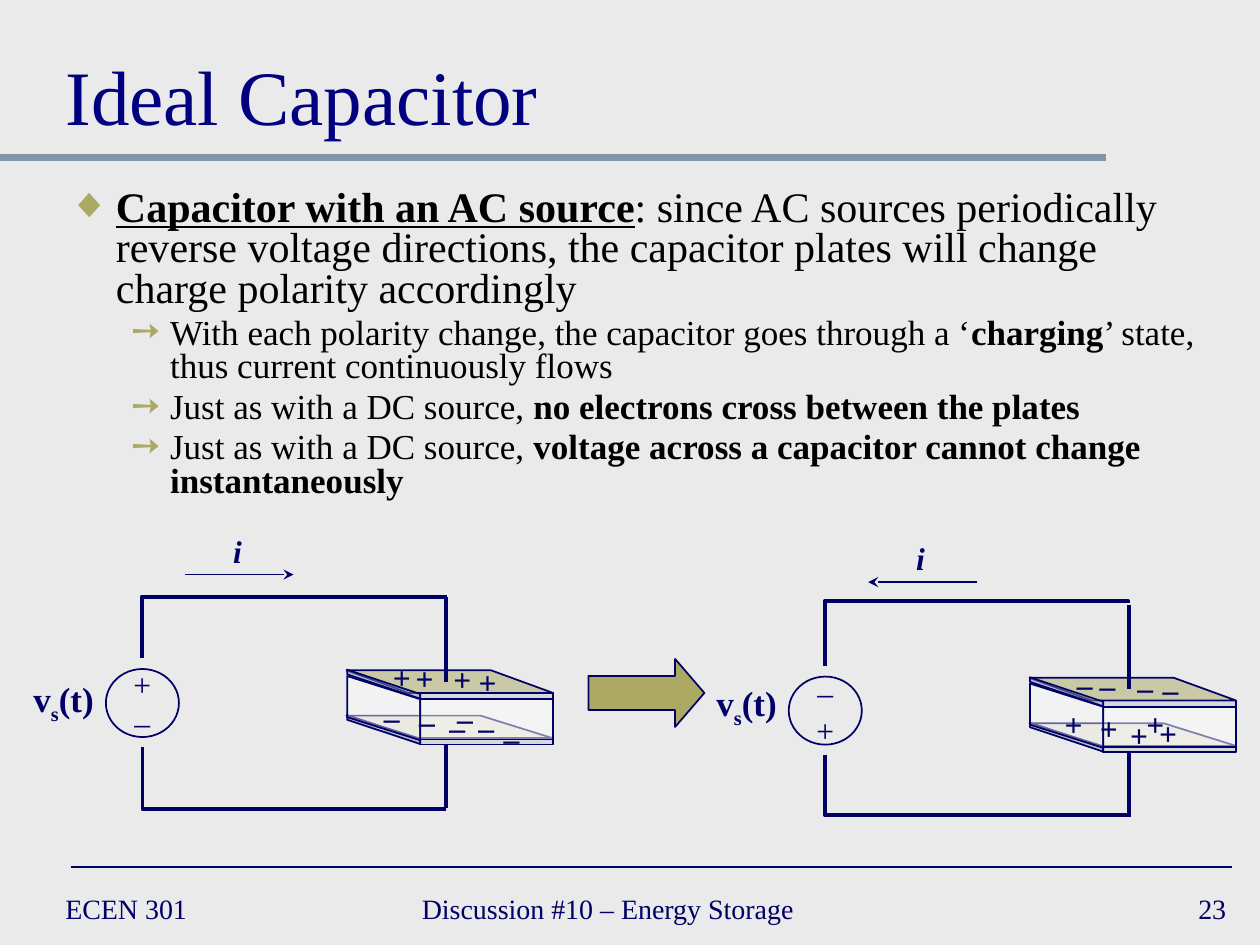
from dataclasses import dataclass
from typing import Optional

from lxml.etree import SubElement
from pptx import Presentation
from pptx.dml.color import RGBColor
from pptx.enum.shapes import MSO_CONNECTOR, MSO_SHAPE
from pptx.enum.text import MSO_ANCHOR, MSO_AUTO_SIZE, PP_ALIGN
from pptx.oxml.ns import qn
from pptx.util import Inches, Pt

FONT = "Times New Roman"
NAVY, SLATE, OLIVE, WHITE = "000066", "8495A9", "ACA964", "FFFFFF"


@dataclass
class Plate:
    kind: MSO_SHAPE
    left: float
    top: float
    width: float
    height: float
    fill: str
    opacity: int
    adjustment: Optional[float] = None
    rotation: int = 0
    flipped: bool = False


@dataclass
class Circuit:
    offset_x: float
    offset_y: float
    label_top: float
    upper_sign: str
    lower_sign: str
    lower_charges: list[tuple[float, float]]
    wire_bends: tuple[float, float]
    current_ends: tuple[float, float]


@dataclass
class Bullet:
    character: str
    level: int
    size: int
    left: float
    hanging: float
    runs: list[tuple[str, bool, bool]]


SLANTED, BOX = MSO_SHAPE.PARALLELOGRAM, MSO_SHAPE.RECTANGLE


def electrode(top: float, slant: float, opacity: int) -> list[Plate]:
    return [
        Plate(SLANTED, 2.75, top, 1.64, 0.18, OLIVE, opacity, slant, flipped=True),
        Plate(BOX, 3.33, top + 0.18, 1.06, 0.05, SLATE, 20),
        Plate(SLANTED, 2.93, top - 0.18, 0.23, 0.58, SLATE, 50, 0.84, 270),
    ]


PLATES = electrode(5.32, 2.74, 50) + electrode(5.68, 3.2, 20) + [
    Plate(BOX, 3.33, 5.55, 1.06, 0.32, WHITE, 50),
    Plate(SLANTED, 2.79, 5.33, 0.51, 0.58, WHITE, 40, 0.36, 270),
]
UPPER_CHARGES = [(3.02, 5.17), (3.2, 5.18), (3.5, 5.19), (3.7, 5.21)]
CIRCUITS = [
    Circuit(0, 0, 5.33, "+", "–",
            [(2.94, 5.49), (3.22, 5.52), (3.46, 5.57), (3.52, 5.5), (3.89, 5.66), (3.69, 5.57)],
            (0.98, 1), (1.47, 2.33)),
    Circuit(5.42, 0.06, 5.36, "–", "+",
            [(2.93, 5.49), (3.21, 5.52), (3.45, 5.57), (3.58, 5.49), (3.68, 5.56)],
            (1.03, 0.98), (2.33, 1.47)),
]
BULLETS = [
    Bullet("◆", 0, 24, 0.38, 0.38, [
        ("Capacitor with an AC source", True, True),
        (": since AC sources periodically reverse voltage directions, "
         "the capacitor plates will change charge polarity accordingly", False, False)]),
    Bullet("➙", 1, 20, 0.81, 0.31, [
        ("With each polarity change, the capacitor goes through a ‘", False, False),
        ("charging", True, False),
        ("’ state, thus current continuously flows", False, False)]),
    Bullet("➙", 1, 20, 0.81, 0.31, [
        ("Just as with a DC source, ", False, False),
        ("no electrons cross between the plates", True, False)]),
    Bullet("➙", 1, 20, 0.81, 0.31, [
        ("Just as with a DC source, ", False, False),
        ("voltage across a capacitor cannot change instantaneously", True, False)]),
]


def color(value: str) -> RGBColor:
    return RGBColor.from_string(value)


def place(shape, left: float, top: float, width: float, height: float) -> None:
    shape.left, shape.top = Inches(left), Inches(top)
    shape.width, shape.height = Inches(width), Inches(height)


def style_font(font, size: int, value: str = NAVY) -> None:
    font.name, font.size = FONT, Pt(size)
    font.color.rgb = color(value)


def add_line(shapes, start, end, weight: float, value: str = NAVY,
             kind=MSO_CONNECTOR.STRAIGHT, arrow: bool = False):
    connector = shapes.add_connector(kind, *map(Inches, (*start, *end)))
    connector.line.color.rgb = color(value)
    connector.line.width = Pt(weight)
    if arrow:
        SubElement(connector.line._get_or_add_ln(), qn("a:tailEnd"), type="stealth")
    SubElement(connector._element.spPr, qn("a:effectLst"))
    return connector


def add_wire(shapes, start, end, bend: float) -> None:
    connector = add_line(shapes, start, end, 2.25, kind=MSO_CONNECTOR.ELBOW)
    properties = connector._element.spPr
    properties.find(qn("a:xfrm")).set("rot", str(270 * 60000))
    geometry = properties.find(qn("a:prstGeom"))
    guides = geometry.find(qn("a:avLst"))
    if guides is None:
        guides = SubElement(geometry, qn("a:avLst"))
    SubElement(guides, qn("a:gd"), name="adj1", fmla=f"val {round(bend * 100000)}")


def add_figure(shapes, kind, left: float, top: float, width: float, height: float,
               fill: Optional[str] = None, opacity: int = 100):
    shape = shapes.add_shape(kind, *map(Inches, (left, top, width, height)))
    shape.shadow.inherit = False
    shape.line.color.rgb = color(NAVY)
    shape.line.width = Pt(1)
    if fill is None:
        shape.fill.background()
    else:
        shape.fill.solid()
        shape.fill.fore_color.rgb = color(fill)
        if opacity < 100:
            tint = shape._element.spPr.find(qn("a:solidFill")).find(qn("a:srgbClr"))
            SubElement(tint, qn("a:alpha"), val=str(opacity * 1000))
    return shape


def add_plate(shapes, plate: Plate, left: float, top: float) -> None:
    shape = add_figure(shapes, plate.kind, left, top, plate.width, plate.height,
                       plate.fill, plate.opacity)
    shape.rotation = plate.rotation
    if plate.adjustment is not None:
        shape.adjustments[0] = plate.adjustment
    if plate.flipped:
        shape._element.spPr.find(qn("a:xfrm")).set("flipV", "1")


def add_label(shapes, lines: list[list[str]], left: float, top: float, width: float,
              height: float, size: int = 18, bold: bool = True, italic: bool = False):
    frame = shapes.add_textbox(*map(Inches, (left, top, width, height))).text_frame
    frame.word_wrap = False
    frame.auto_size = MSO_AUTO_SIZE.SHAPE_TO_FIT_TEXT
    for index, texts in enumerate(lines):
        paragraph = frame.add_paragraph() if index else frame.paragraphs[0]
        paragraph.alignment = PP_ALIGN.CENTER
        style_font(paragraph.font, size)
        paragraph.font.bold, paragraph.font.italic = bold, italic
        for text in texts:
            paragraph.add_run().text = text
    return frame


def add_circuit(slide, circuit: Circuit) -> None:
    shapes = slide.shapes.add_group_shape().shapes

    def at(x: float, y: float) -> tuple[float, float]:
        return x + circuit.offset_x, y + circuit.offset_y

    for plate in PLATES:
        add_plate(shapes, plate, *at(plate.left, plate.top))
    add_line(shapes, at(3.54, 5.41), at(3.54, 4.74), 2.25)
    add_line(shapes, at(3.54, 6.41), at(3.54, 5.91), 2.25)
    for sign, charges in ((circuit.upper_sign, UPPER_CHARGES),
                          (circuit.lower_sign, circuit.lower_charges)):
        for charge in charges:
            add_label(shapes, [[sign]], *at(*charge), 0.34, 0.4)
    source = add_label(shapes, [["v", "s", "(t)"]], 0.16 + circuit.offset_x,
                       circuit.label_top, 0.69, 0.43, size=20)
    source.paragraphs[0].runs[1].font._element.set("baseline", "-25000")
    add_figure(shapes, MSO_SHAPE.OVAL, *at(0.84, 5.31), 0.58, 0.54)
    add_label(shapes, [[circuit.upper_sign], [circuit.lower_sign]],
              *at(0.96, 5.23), 0.34, 0.7, bold=False)
    add_wire(shapes, at(2.08, 3.77), at(2.58, 6.18), circuit.wire_bends[0])
    add_wire(shapes, at(2.58, 4.97), at(2.09, 7.38), circuit.wire_bends[1])
    tail, head = circuit.current_ends
    add_line(shapes, at(tail, 4.56), at(head, 4.56), 1, arrow=True)
    add_label(shapes, [["i"]], *at(1.75, 4.17), 0.27, 0.4, italic=True)


def add_footer(slide, text: str, left: float, width: float, alignment) -> None:
    frame = slide.shapes.add_textbox(*map(Inches, (left, 7, width, 0.42))).text_frame
    frame.word_wrap = True
    frame.vertical_anchor = MSO_ANCHOR.MIDDLE
    paragraph = frame.paragraphs[0]
    paragraph.text, paragraph.alignment = text, alignment
    style_font(paragraph.font, 16)


def fill_title(title) -> None:
    place(title, 0.42, 0.17, 9.17, 1)
    frame = title.text_frame
    frame.text = "Ideal Capacitor"
    frame.vertical_anchor = MSO_ANCHOR.BOTTOM
    frame.auto_size = MSO_AUTO_SIZE.NONE
    frame.paragraphs[0].alignment = PP_ALIGN.LEFT
    style_font(frame.paragraphs[0].font, 44, "000080")


def fill_body(body) -> None:
    place(body, 0.44, 1.46, 9.14, 2.77)
    frame = body.text_frame
    frame.auto_size = MSO_AUTO_SIZE.NONE
    for index, bullet in enumerate(BULLETS):
        paragraph = frame.add_paragraph() if index else frame.paragraphs[0]
        paragraph.level = bullet.level
        paragraph.line_spacing = 0.8
        if index == 0:
            paragraph.space_before = Pt(0)
        properties = paragraph._p.get_or_add_pPr()
        properties.set("marL", str(Inches(bullet.left)))
        properties.set("indent", str(-Inches(bullet.hanging)))
        SubElement(SubElement(properties, qn("a:buClr")), qn("a:srgbClr"), val=OLIVE)
        SubElement(properties, qn("a:buChar"), char=bullet.character)
        style_font(paragraph.font, bullet.size, "000000")
        for text, bold, underline in bullet.runs:
            run = paragraph.add_run()
            run.text = text
            run.font.bold, run.font.underline = bold, underline


def main() -> None:
    presentation = Presentation()
    presentation.slide_width, presentation.slide_height = Inches(10), Inches(7.5)
    slide = presentation.slides.add_slide(presentation.slide_layouts[1])
    slide.background.fill.solid()
    slide.background.fill.fore_color.rgb = color("EAEAEA")
    add_line(slide.shapes, (0, 1.25), (8.78, 1.25), 4, SLATE)
    add_line(slide.shapes, (0.56, 6.88), (9.78, 6.88), 1)
    add_footer(slide, "ECEN 301", 0.42, 2.17, PP_ALIGN.LEFT)
    add_footer(slide, "Discussion #10 – Energy Storage", 3.25, 3.83, PP_ALIGN.LEFT)
    add_footer(slide, "23", 7.75, 2.08, PP_ALIGN.RIGHT)
    fill_title(slide.shapes.title)
    fill_body(slide.placeholders[1])
    for circuit in CIRCUITS:
        add_circuit(slide, circuit)
    arrow = add_figure(slide.shapes, MSO_SHAPE.RIGHT_ARROW, 4.67, 5.23, 0.92, 0.54, OLIVE)
    arrow.adjustments[1] = 0.43
    presentation.save("out.pptx")


if __name__ == "__main__":
    main()
